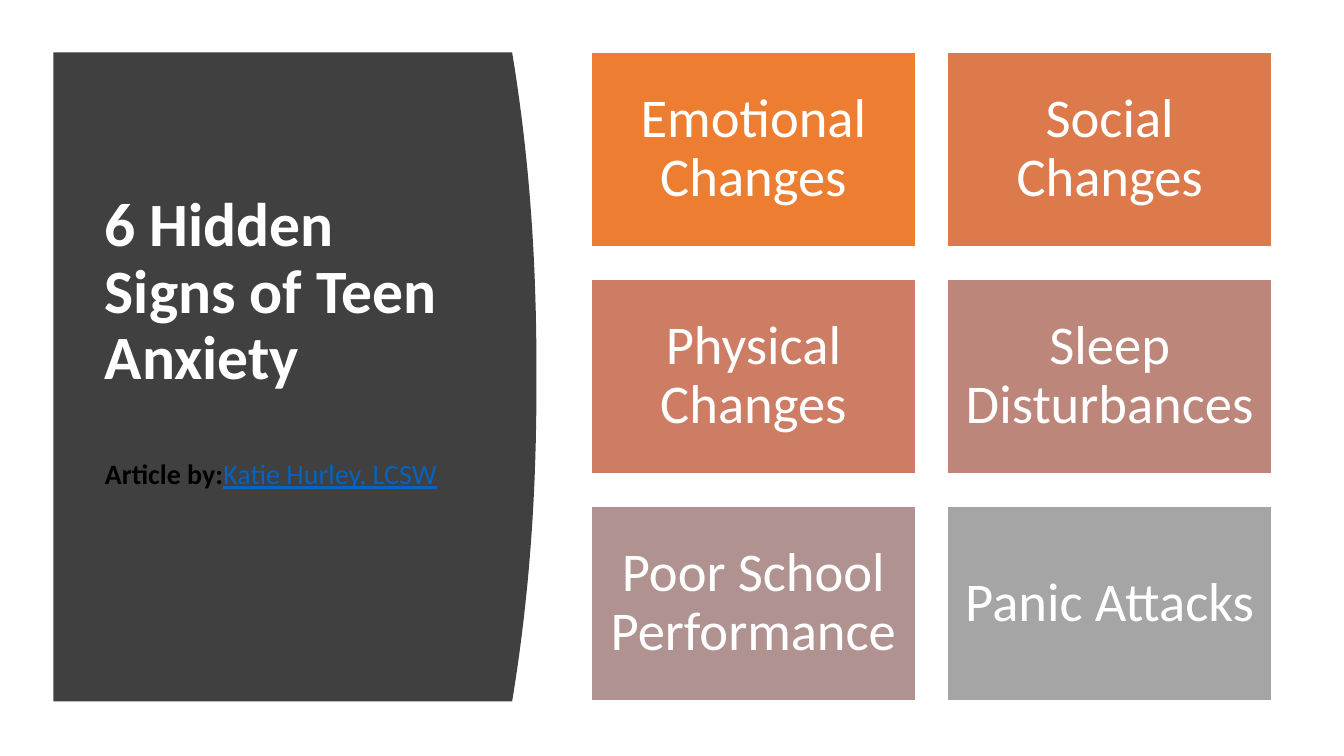
"""Slide on six hidden signs of teen anxiety: a curved title panel and a grid of cards."""
import pptx
import pptx.util
import pptx.dml.color
import pptx.enum.shapes
import pptx.enum.text

Pt = pptx.util.Pt
ALIGN = pptx.enum.text.PP_ALIGN
MIDDLE = pptx.enum.text.MSO_ANCHOR.MIDDLE
COLORS = {"panel": "404040", "white": "FFFFFF", "black": "000000", "link": "0563C1"}
CARDS = [
    ("Emotional Changes", "ED7D31"),
    ("Social Changes", "DC7A4B"),
    ("Physical Changes", "CC7D64"),
    ("Sleep Disturbances", "BD867B"),
    ("Poor School Performance", "B09391"),
    ("Panic Attacks", "A5A5A5"),
]


def rgb(value):
    return pptx.dml.color.RGBColor.from_string(value)


def add_run(p, text, color, **formats):
    r = p.add_run()
    r.text = text
    r.font.name = "Calibri"
    r.font.color.rgb = rgb(color)
    for name, value in formats.items():
        setattr(r.font, name, value)


prs = pptx.Presentation()
prs.slide_width, prs.slide_height = Pt(960), Pt(540)
s = prs.slides.add_slide(prs.slide_layouts[5])

left, top, bottom, edge, bulge = 38.2, 37.4, 501.1, 365.8, 17.4
steps = 40
curve = []
for i in range(steps + 1):
    t = 2 * i / steps - 1
    x = edge + bulge * (1 - abs(t) ** 2.2)
    y = top + (bottom - top) * i / steps
    curve.append((Pt(x), Pt(y)))
builder = s.shapes.build_freeform(Pt(left), Pt(top))
builder.add_line_segments(curve + [(Pt(left), Pt(bottom))], close=True)
panel = builder.convert_to_shape()
panel.shadow.inherit = False
panel.fill.solid()
panel.fill.fore_color.rgb = rgb(COLORS["panel"])
panel.line.fill.background()

title = s.shapes.title
s.shapes._spTree.append(title._element)
title.left, title.top, title.width, title.height = Pt(67.7), Pt(79.9), Pt(269.3), Pt(377.3)
tf = title.text_frame
frame_formats = {
    "word_wrap": True,
    "auto_size": pptx.enum.text.MSO_AUTO_SIZE.NONE,
    "vertical_anchor": MIDDLE,
    "margin_bottom": Pt(52),
}
for name, value in frame_formats.items():
    setattr(tf, name, value)
heading, byline = tf.paragraphs[0], tf.add_paragraph()
for p in (heading, byline):
    p.alignment = ALIGN.LEFT
    p.line_spacing = 0.9
byline.space_before = Pt(48)
add_run(heading, "6 Hidden Signs of Teen Anxiety", COLORS["white"], size=Pt(44), bold=True)
add_run(byline, "Article by:", COLORS["black"], size=Pt(20), bold=True)
add_run(byline, "Katie Hurley, LCSW", COLORS["link"], size=Pt(20), bold=False, underline=True)

for i, (text, color) in enumerate(CARDS):
    row, col = divmod(i, 2)
    sp = s.shapes.add_shape(
        pptx.enum.shapes.MSO_SHAPE.RECTANGLE,
        Pt(422.2 + 254.5 * col), Pt(37.5 + 162.1 * row), Pt(232), Pt(139))
    sp.shadow.inherit = False
    sp.fill.solid()
    sp.fill.fore_color.rgb = rgb(color)
    sp.line.color.rgb = rgb(COLORS["white"])
    sp.line.width = Pt(1)
    tf = sp.text_frame
    tf.word_wrap = True
    tf.vertical_anchor = MIDDLE
    for side in ("left", "top", "right", "bottom"):
        setattr(tf, f"margin_{side}", Pt(11.5))
    p = tf.paragraphs[0]
    p.alignment = ALIGN.CENTER
    p.line_spacing = 0.9
    add_run(p, text, COLORS["white"], size=Pt(39))

prs.save("out.pptx")
